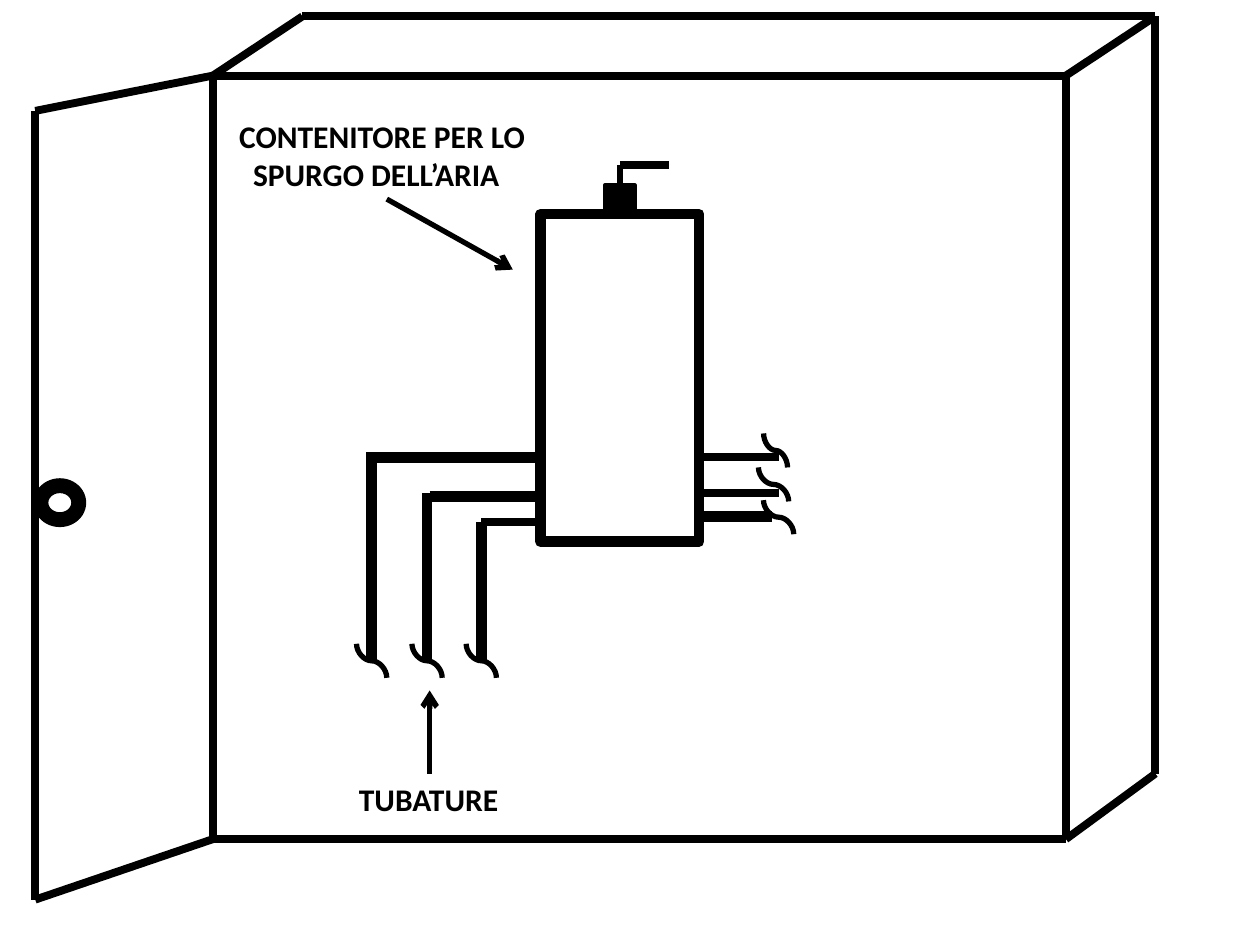
from dataclasses import dataclass

import pptx
import pptx.dml.color
import pptx.enum.shapes
import pptx.enum.text
import pptx.oxml
import pptx.oxml.ns
import pptx.util
from pptx.util import Inches

BLACK = pptx.dml.color.RGBColor(0x00, 0x00, 0x00)
SHAPE = pptx.enum.shapes.MSO_SHAPE
CONNECTOR = pptx.enum.shapes.MSO_CONNECTOR
THIN, MEDIUM, THICK = 3, 4.5, 6
BREAK_HEIGHT = 0.27
A_NS = pptx.oxml.ns.nsdecls("a")


@dataclass
class Line:
    x1: float
    y1: float
    x2: float
    y2: float
    width: float = MEDIUM
    arrow: bool = False


@dataclass
class Box:
    kind: SHAPE
    left: float
    top: float
    width: float
    height: float
    line: float
    filled: bool = True


@dataclass
class PipeBreak:
    left: float
    top: float
    width: float = 0.24


@dataclass
class Label:
    left: float
    top: float
    width: float
    height: float
    lines: list[tuple[str, float]]


LEFT, TOP, RIGHT, BOTTOM = 1.69, 0.6, 8.46, 6.66
BACK_LEFT, BACK_TOP, BACK_RIGHT, BACK_BOTTOM = 2.4, 0.13, 9.17, 6.14
DOOR_X, DOOR_TOP, DOOR_BOTTOM = 0.28, 0.88, 7.14
TANK_LEFT, TANK_RIGHT = 4.29, 5.55
VALVE_X, VALVE_TOP = 4.92, 1.31
PIPE_END = 5.25

TANK = [
    Box(SHAPE.RECTANGLE, TANK_LEFT, 1.7, TANK_RIGHT - TANK_LEFT, 2.6, THICK, False),
    Box(SHAPE.RECTANGLE, 4.8, 1.47, 0.24, 0.24, 2),
]
KNOB = Box(SHAPE.DONUT, DOOR_X, 3.81, 0.39, 0.36, 2)

VALVE = [
    Line(VALVE_X, 1.47, VALVE_X, VALVE_TOP, THIN),
    Line(VALVE_X, VALVE_TOP, 5.31, VALVE_TOP),
]
CABINET = [
    Line(LEFT, TOP, RIGHT, TOP),
    Line(LEFT, TOP, LEFT, BOTTOM),
    Line(RIGHT, TOP, RIGHT, BOTTOM),
    Line(LEFT, BOTTOM, RIGHT, BOTTOM),
    Line(RIGHT, TOP, BACK_RIGHT, BACK_TOP),
    Line(RIGHT, BOTTOM, BACK_RIGHT, BACK_BOTTOM),
    Line(BACK_RIGHT, BACK_TOP, BACK_RIGHT, BACK_BOTTOM),
    Line(LEFT, TOP, BACK_LEFT, BACK_TOP),
    Line(BACK_LEFT, BACK_TOP, BACK_RIGHT, BACK_TOP),
]
DOOR = [
    Line(LEFT, TOP, DOOR_X, DOOR_TOP),
    Line(LEFT, BOTTOM, DOOR_X, DOOR_BOTTOM),
    Line(DOOR_X, DOOR_TOP, DOOR_X, DOOR_BOTTOM),
]
DOWN_PIPES = [
    Line(2.95, PIPE_END, 2.95, 3.59, THICK),
    Line(3.39, PIPE_END, 3.39, 3.91, THICK),
    Line(3.82, PIPE_END, 3.82, 4.14, THICK),
]
LEFT_PIPES = [
    Line(2.95, 3.63, TANK_LEFT, 3.63, THICK),
    Line(3.41, 3.94, TANK_LEFT, 3.94, THICK),
    Line(3.82, 4.14, TANK_LEFT, 4.14),
]
RIGHT_PIPES = [
    Line(TANK_RIGHT, 3.63, 6.18, 3.63),
    Line(TANK_RIGHT, 3.91, 6.18, 3.91),
    Line(TANK_RIGHT, 4.1, 6.13, 4.1, THICK),
]
ARROWS = [
    Line(3.41, 6.14, 3.41, 5.48, THIN, True),
    Line(3.07, 1.58, 4.07, 2.14, THIN, True),
]
PIPE_BREAKS = [
    PipeBreak(6.06, 3.44, 0.19),
    PipeBreak(6.02, 3.71),
    PipeBreak(6.06, 3.97),
    *[PipeBreak(pipe.x1 - 0.12, 5.11) for pipe in DOWN_PIPES],
]
LABELS = [
    Label(2.75, 6.14, 1.32, 0.4, [("TUBATURE", 0)]),
    Label(1.8, 0.88, 2.55, 0.71,
          [("CONTENITORE PER LO", 0), ("SPURGO DELL’ARIA", 0.11)]),
]


def style_connector(cn: pptx.shapes.connector.Connector, width: float) -> None:
    cn.line.color.rgb = BLACK
    cn.line.width = pptx.util.Pt(width)
    cn._element.spPr.append(pptx.oxml.parse_xml(f"<a:effectLst {A_NS}/>"))


def draw_line(s: pptx.slide.Slide, line: Line) -> None:
    cn = s.shapes.add_connector(
        CONNECTOR.STRAIGHT,
        Inches(line.x1), Inches(line.y1), Inches(line.x2), Inches(line.y2))
    style_connector(cn, line.width)
    if line.arrow:
        cn.line._get_or_add_ln().append(
            pptx.oxml.parse_xml(f'<a:tailEnd {A_NS} type="arrow"/>'))


def draw_break(s: pptx.slide.Slide, mark: PipeBreak) -> None:
    cx, cy = mark.left + mark.width / 2, mark.top + BREAK_HEIGHT / 2
    dx, dy = BREAK_HEIGHT / 2, mark.width / 2
    cn = s.shapes.add_connector(
        CONNECTOR.CURVE,
        Inches(cx + dx), Inches(cy - dy), Inches(cx - dx), Inches(cy + dy))
    cn._element.spPr.xfrm.set("rot", str(270 * 60000))
    style_connector(cn, THIN)


def draw_box(s: pptx.slide.Slide, box: Box) -> None:
    sp = s.shapes.add_shape(
        box.kind, Inches(box.left), Inches(box.top),
        Inches(box.width), Inches(box.height))
    sp.shadow.inherit = False
    sp.line.color.rgb = BLACK
    sp.line.width = pptx.util.Pt(box.line)
    if box.filled:
        sp.fill.solid()
        sp.fill.fore_color.rgb = BLACK
    else:
        sp.fill.background()


def draw_label(s: pptx.slide.Slide, label: Label) -> None:
    sp = s.shapes.add_textbox(
        Inches(label.left), Inches(label.top),
        Inches(label.width), Inches(label.height))
    tf = sp.text_frame
    tf.word_wrap = False
    tf.auto_size = pptx.enum.text.MSO_AUTO_SIZE.SHAPE_TO_FIT_TEXT
    for i, (text, indent) in enumerate(label.lines):
        p = tf.add_paragraph() if i else tf.paragraphs[0]
        p.text = text
        p.font.name = "Calibri"
        p.font.size = pptx.util.Pt(18)
        p.font.bold = True
        p.font.color.rgb = BLACK
        if indent:
            p._p.get_or_add_pPr().set("marL", str(Inches(indent)))


def main() -> None:
    prs = pptx.Presentation()
    prs.slide_width, prs.slide_height = Inches(10), Inches(7.5)
    s = prs.slides.add_slide(prs.slide_layouts[6])
    for box in TANK:
        draw_box(s, box)
    for line in DOWN_PIPES:
        draw_line(s, line)
    for mark in PIPE_BREAKS:
        draw_break(s, mark)
    for label in LABELS:
        draw_label(s, label)
    for line in ARROWS + VALVE + CABINET + LEFT_PIPES + RIGHT_PIPES + DOOR:
        draw_line(s, line)
    draw_box(s, KNOB)
    prs.save("out.pptx")


if __name__ == "__main__":
    main()
